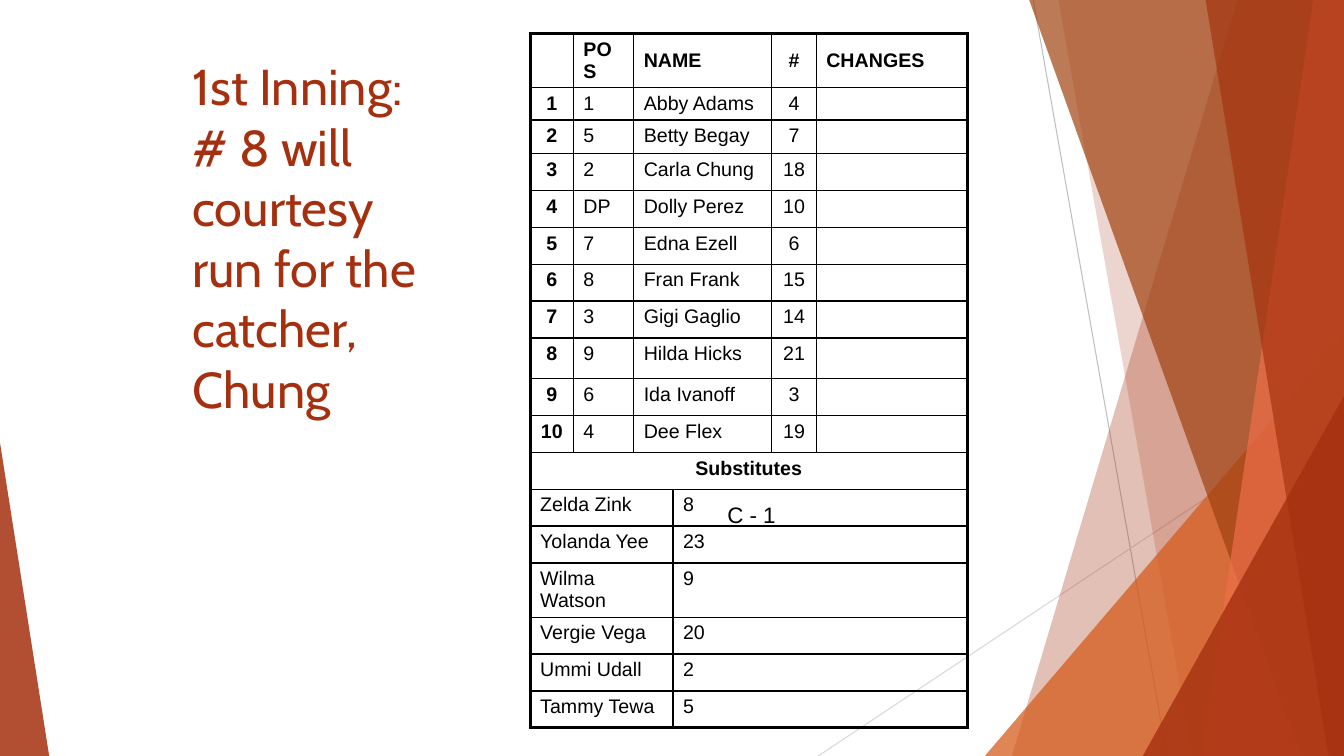
"""Builds the first-inning lineup card slide with its courtesy runner note."""
from dataclasses import dataclass

from lxml.etree import SubElement
from pptx import Presentation
from pptx.dml.color import RGBColor
from pptx.enum.shapes import MSO_CONNECTOR, MSO_SHAPE
from pptx.enum.text import MSO_ANCHOR, PP_ALIGN
from pptx.oxml.ns import qn
from pptx.util import Cm, Pt

WIDTH, HEIGHT, TOP = 33.87, 19.05, -0.02
RUST, BLACK = "A5300F", "000000"
PLAIN_TABLE = "{2D5ABB26-0587-4C30-8999-92F81FD0307C}"
COLUMNS = [1.09, 1.52, 0.99, 2.49, 1.12, 3.81]
ROW = 0.93
ROWS = [1.35, 0.82, 0.84] + [ROW] * 5 + [1.02] + [ROW] * 5 + [1.36] + [ROW] * 3


@dataclass
class Ray:
    start: tuple[float, float]
    end: tuple[float, float]
    color: str


@dataclass
class Shard:
    """Panel that reaches the right edge, slanted on its left side."""
    top_x: float
    bottom_x: float
    color: str
    opacity: int


@dataclass
class Wedge:
    """Right triangle standing on the bottom edge."""
    left: float
    top: float
    width: float
    apex: float
    color: str
    opacity: int


@dataclass
class Entry:
    text: str
    col: int
    span: int = 1
    bold: bool = False
    centered: bool = False


RAYS = [
    Ray((26.04, 0), (29.41, HEIGHT), "BFBFBF"),
    Ray((WIDTH, 10.24), (20.62, HEIGHT), "D9D9D9"),
]
FACETS = [
    Shard(31.19, 25.5, RUST, 30),
    Shard(26.67, 30.05, RUST, 20),
    Wedge(24.82, 8.46, 9.05, 1, "D55816", 72),
    Shard(25.93, 32.79, "A04210", 70),
    Shard(33.1, 30.28, "EE6E4A", 70),
    Shard(30.38, 33.48, RUST, 65),
    Wedge(28.8, 9.98, 5.07, 1, RUST, 80),
    Wedge(0, 11.15, 1.24, 0, RUST, 85),
]
LINEUP = [
    ("1", "Abby Adams", "4"), ("5", "Betty Begay", "7"),
    ("2", "Carla Chung", "18"), ("DP", "Dolly Perez", "10"),
    ("7", "Edna Ezell", "6"), ("8", "Fran Frank", "15"),
    ("3", "Gigi Gaglio", "14"), ("9", "Hilda Hicks", "21"),
    ("6", "Ida Ivanoff", "3"), ("4", "Dee Flex", "19"),
]
SUBSTITUTES = [
    ("Zelda Zink", "8"), ("Yolanda Yee", "23"), ("Wilma Watson", "9"),
    ("Vergie Vega", "20"), ("Ummi Udall", "2"), ("Tammy Tewa", "5"),
]


def rgb(color: str) -> RGBColor:
    return RGBColor.from_string(color)


def draw_ray(s, ray: Ray) -> None:
    points = [Cm(v) for v in (*ray.start, *ray.end)]
    line = s.shapes.add_connector(MSO_CONNECTOR.STRAIGHT, *points)
    line.line.color.rgb = rgb(ray.color)
    line.line.width = Pt(0.75)
    SubElement(line._element.spPr, qn("a:effectLst"))


def draw_facet(s, facet: Shard | Wedge) -> None:
    if isinstance(facet, Shard):
        builder = s.shapes.build_freeform(Cm(facet.top_x), Cm(TOP))
        corners = [(WIDTH, TOP), (WIDTH, HEIGHT), (facet.bottom_x, HEIGHT)]
        builder.add_line_segments([(Cm(x), Cm(y)) for x, y in corners])
        sp = builder.convert_to_shape()
    else:
        sp = s.shapes.add_shape(
            MSO_SHAPE.ISOSCELES_TRIANGLE, Cm(facet.left), Cm(facet.top),
            Cm(facet.width), Cm(HEIGHT - facet.top))
        sp.adjustments[0] = facet.apex
    sp.shadow.inherit = False
    sp.line.fill.background()
    sp.fill.solid()
    sp.fill.fore_color.rgb = rgb(facet.color)
    fill_color = sp._element.spPr.find(f"{qn('a:solidFill')}/{qn('a:srgbClr')}")
    SubElement(fill_color, qn("a:alpha"), val=str(facet.opacity * 1000))


def set_font(p, name: str, size: int, color: str, bold: bool = False) -> None:
    p.font.name = name
    p.font.size = Pt(size)
    p.font.color.rgb = rgb(color)
    p.font.bold = bold


def add_text(s, box: tuple[float, ...], text: str, font: str, size: int, color: str) -> None:
    tf = s.shapes.add_textbox(*(Cm(v) for v in box)).text_frame
    tf.word_wrap = True
    p = tf.paragraphs[0]
    p.text = text
    set_font(p, font, size, color)


def set_border(cell, side: str, width: float) -> None:
    ln = SubElement(cell._tc.get_or_add_tcPr(), qn(f"a:ln{side}"), w=str(Pt(width)))
    SubElement(SubElement(ln, qn("a:solidFill")), qn("a:srgbClr"), val=BLACK)


def card_rows() -> list[list[Entry]]:
    rows = [[Entry("", 0), Entry("POS", 1, bold=True), Entry("NAME", 2, 2, True),
             Entry("#", 4, 1, True, True), Entry("CHANGES", 5, bold=True)]]
    for order, (position, name, number) in enumerate(LINEUP, 1):
        rows.append([Entry(str(order), 0, 1, True, True), Entry(position, 1),
                     Entry(name, 2, 2), Entry(number, 4, centered=True), Entry("", 5)])
    rows.append([Entry("Substitutes", 0, 6, True, True)])
    rows += [[Entry(name, 0, 3), Entry(number, 3, 3)] for name, number in SUBSTITUTES]
    return rows


def fill_cell(table, row: int, entry: Entry) -> None:
    last = entry.col + entry.span - 1
    cell = table.cell(row, entry.col)
    if entry.span > 1:
        cell.merge(table.cell(row, last))
    outer = {"L": entry.col == 0, "R": last == len(COLUMNS) - 1,
             "T": row == 0, "B": row == len(ROWS) - 1}
    for side, on_edge in outer.items():
        set_border(cell, side, 2.25 if on_edge else 1)
    cell.fill.background()
    cell.vertical_anchor = MSO_ANCHOR.MIDDLE if row == 0 else MSO_ANCHOR.TOP
    p = cell.text_frame.paragraphs[0]
    p.text = entry.text
    p.alignment = PP_ALIGN.CENTER if entry.centered else PP_ALIGN.LEFT
    set_font(p, "Arial", 14, BLACK, entry.bold)


def draw_card(s) -> None:
    table = s.shapes.add_table(len(ROWS), len(COLUMNS), Cm(13.36), Cm(0.84),
                               Cm(sum(COLUMNS)), Cm(sum(ROWS))).table
    table.first_row = table.horz_banding = False
    table._tbl.tblPr.find(qn("a:tableStyleId")).text = PLAIN_TABLE
    for column, width in zip(table.columns, COLUMNS):
        column.width = Cm(width)
    for row, height in zip(table.rows, ROWS):
        row.height = Cm(height)
    for row, entries in enumerate(card_rows()):
        for entry in entries:
            fill_cell(table, row, entry)


def main() -> None:
    prs = Presentation()
    prs.slide_width, prs.slide_height = Cm(WIDTH), Cm(HEIGHT)
    s = prs.slides.add_slide(prs.slide_layouts[6])
    for ray in RAYS:
        draw_ray(s, ray)
    for facet in FACETS:
        draw_facet(s, facet)
    draw_card(s)
    add_text(s, (4.6, 1.27, 6.6, 16.51),
             "1st Inning:\v# 8 will courtesy run for the catcher, Chung", "Cabin", 36, RUST)
    add_text(s, (18.08, 12.5, 2.41, 0.94), "C - 1", "Arial", 16, BLACK)
    prs.save("out.pptx")


if __name__ == "__main__":
    main()
